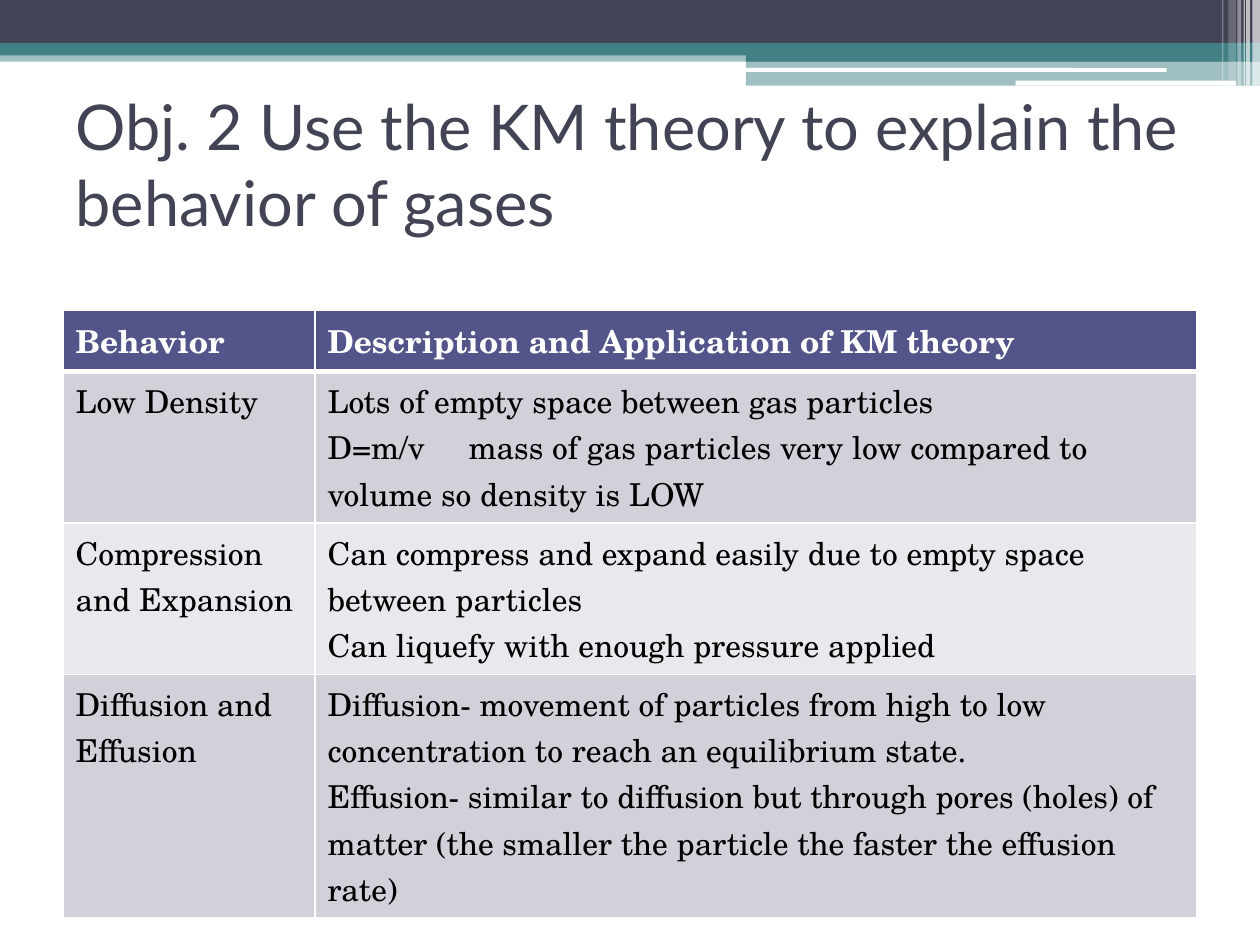
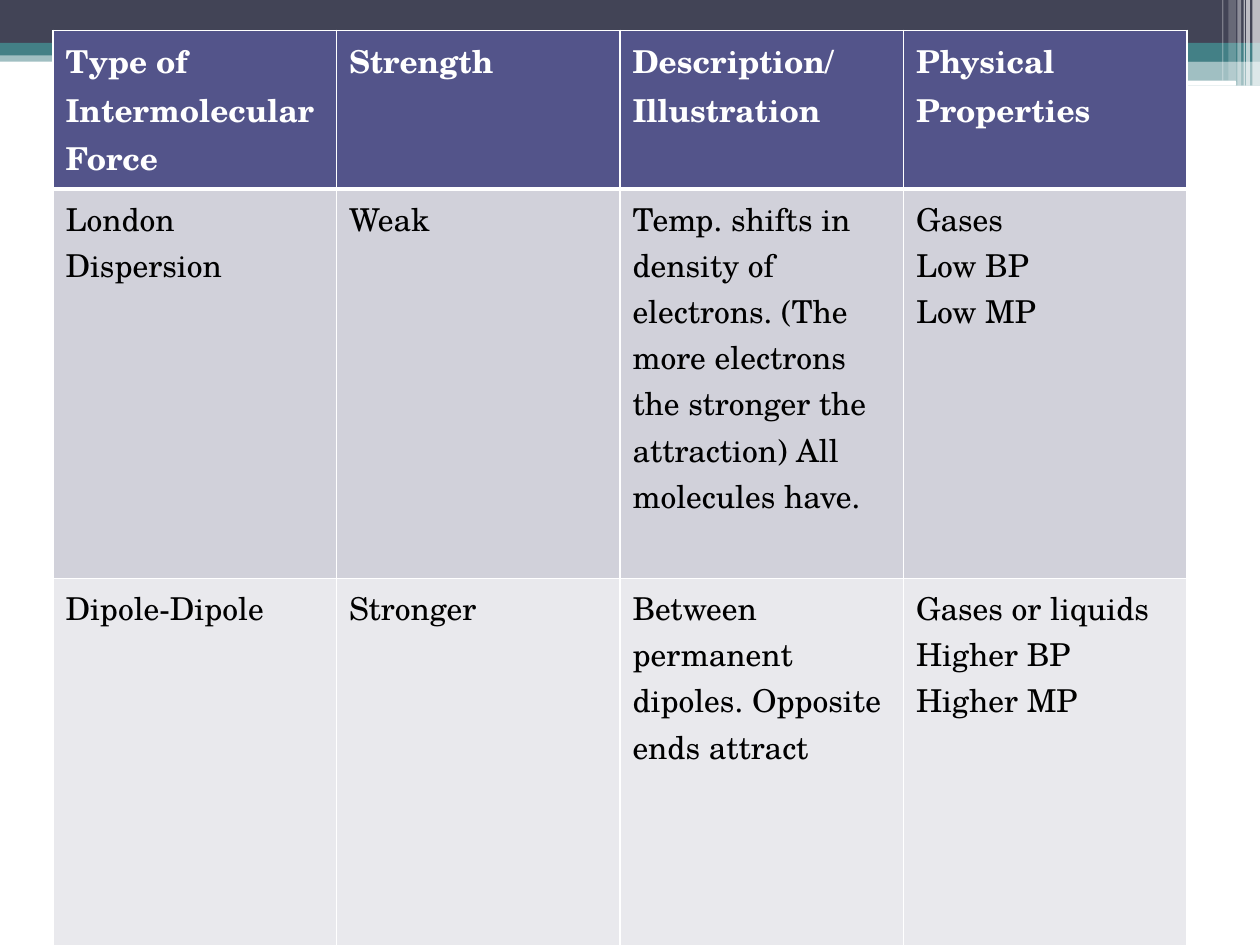
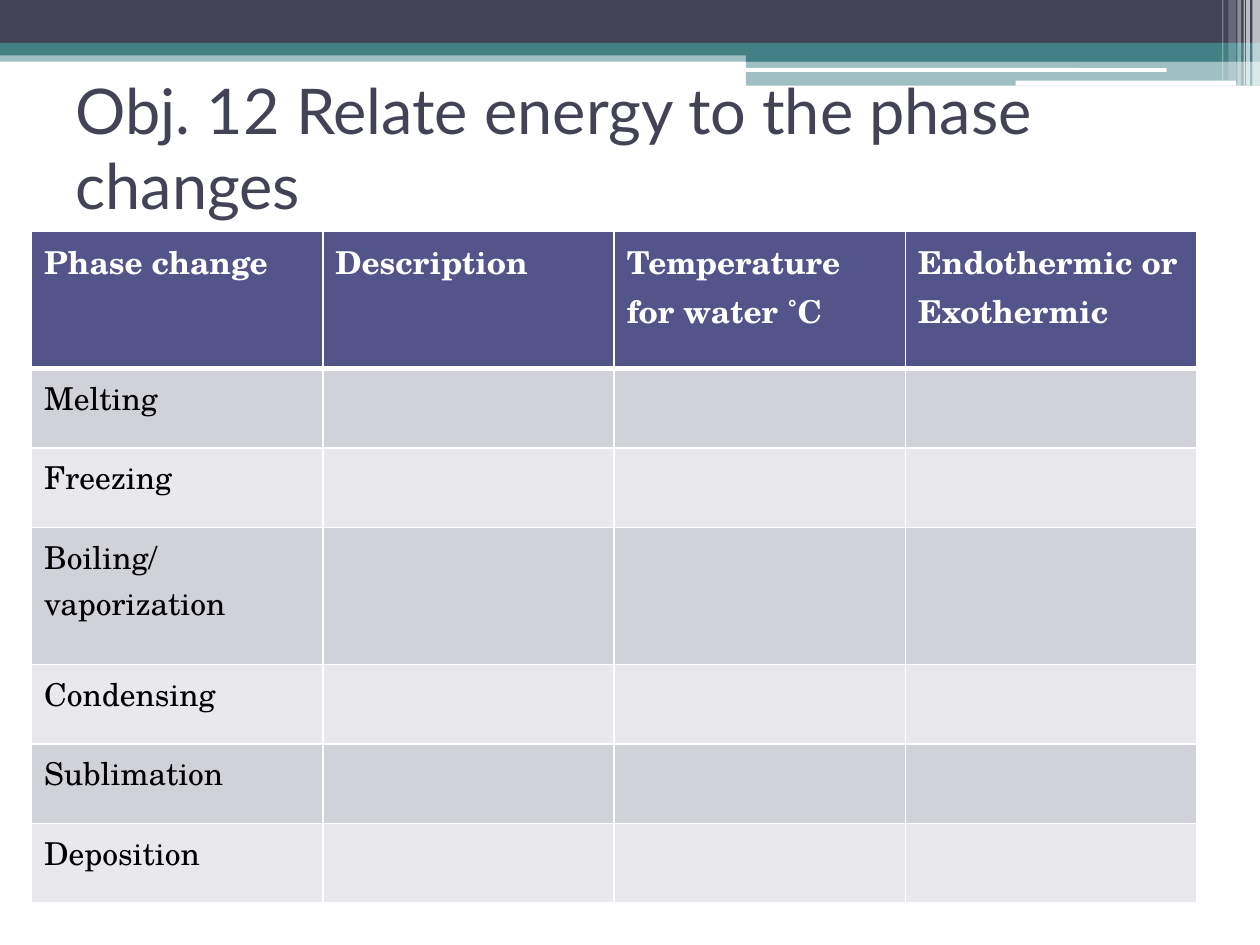
import pptx
import pptx.util
import pptx.dml.color
import pptx.enum.shapes
import pptx.enum.text
import pptx.oxml
import pptx.oxml.ns

qn = pptx.oxml.ns.qn
SPACE = pptx.oxml.ns.nsdecls("a")
INK, TEAL, WHITE, BLACK = "424456", "438086", "FFFFFF", "000000"
HEAD, BANDS = "53548A", ("E9E9ED", "D1D1DA")
SERIF, SANS = "TeX Gyre Schola", "Lato"

deck = pptx.Presentation()
deck.slide_width = pptx.util.Inches(10)
deck.slide_height = pptx.util.Inches(7.5)
UNIT = deck.slide_width // 1000


def tint(code):
    return pptx.dml.color.RGBColor.from_string(code)


def write(para, text, face, size, code, bold=False):
    run = para.add_run()
    run.text = text
    run.font.name = face
    run.font.size = pptx.util.Pt(size)
    run.font.bold = bold
    run.font.color.rgb = tint(code)


RECT = pptx.enum.shapes.MSO_SHAPE.RECTANGLE
ROUND = pptx.enum.shapes.MSO_SHAPE.ROUNDED_RECTANGLE
bars = [
    (RECT, 0, 40, 1000, 9, TEAL, 50),
    (RECT, 0, 0, 1000, 34, INK, 100),
    (RECT, 0, 34, 1000, 10, TEAL, 100),
    (RECT, 592, 39, 408, 10, TEAL, 100),
    (RECT, 592, 48, 408, 20, TEAL, 50),
    (ROUND, 591, 54, 335, 3, WHITE, 100),
    (ROUND, 806, 64, 175, 4, WHITE, 100),
]
for left, wide, high, alpha in [
    (994, 6, 68, 65), (989, 3, 68, 65), (987, 1, 68, 60),
    (982, 3, 68, 40), (975, 6, 64, 20), (970, 1, 64, 30),
]:
    bars.append((RECT, left, 0, wide, high, WHITE, alpha))

pages = [
    {
        "title": "Obj. 2 Use the KM theory to explain the behavior of gases",
        "box": (50, 67, 900, 125),
        "at": (50, 246),
        "cols": [200, 700],
        "rows": [49, 120, 120, 156],
        "cells": [
            ["Behavior", "Description and Application of KM theory"],
            ["Low Density",
             "Lots of empty space between gas particles\n"
             "D=m/v\tmass of gas particles very low compared to volume so density is LOW"],
            ["Compression and Expansion",
             "Can compress and expand easily due to empty space between particles\n"
             "Can liquefy with enough pressure applied"],
            ["Diffusion and Effusion",
             "Diffusion- movement of particles from high to low concentration "
             "to reach an equilibrium state.\n"
             "Effusion- similar to diffusion but through pores (holes) of matter "
             "(the smaller the particle the faster the effusion rate)"],
        ],
    },
    {
        "title": None,
        "at": (42, 24),
        "cols": [225] * 4,
        "rows": [118, 309, 308],
        "cells": [
            ["Type of Intermolecular Force", "Strength",
             "Description/Illustration", "Physical Properties"],
            ["London Dispersion", "Weak",
             "Temp. shifts in density of electrons. (The more electrons "
             "the stronger the attraction) All molecules have.",
             "Gases\nLow BP\nLow MP"],
            ["Dipole-Dipole", "Stronger",
             "Between permanent dipoles. Opposite ends attract",
             "Gases or liquids\nHigher BP\nHigher MP"],
        ],
    },
    {
        "title": "Obj. 12 Relate energy to the phase changes",
        "box": (50, 58, 900, 117),
        "at": (25, 183.5),
        "cols": [231.25] * 4,
        "rows": [109, 63, 63, 109, 63, 63, 63],
        "cells": [
            ["Phase change", "Description",
             "Temperature for water ˚C", "Endothermic or Exothermic"],
            ["Melting"], ["Freezing"], ["Boiling/vaporization"],
            ["Condensing"], ["Sublimation"], ["Deposition"],
        ],
    },
]

for page in pages:
    slide = deck.slides.add_slide(deck.slide_layouts[5 if page["title"] else 6])

    if page is pages[0]:
        for spot, (kind, left, top, wide, high, code, alpha) in enumerate(bars, 2):
            bar = slide.shapes.add_shape(
                kind, left * UNIT, top * UNIT, wide * UNIT, high * UNIT)
            bar.shadow.inherit = False
            bar.line.fill.background()
            bar.fill.solid()
            bar.fill.fore_color.rgb = tint(code)
            if alpha < 100:
                bar.element.find(".//" + qn("a:srgbClr")).append(
                    pptx.oxml.parse_xml(f'<a:alpha {SPACE} val="{alpha * 1000}"/>'))
            deck.slide_master.shapes.element.insert(spot, bar.element)

    if page["title"]:
        title = slide.shapes.title
        title.left, title.top, title.width, title.height = [n * UNIT for n in page["box"]]
        frame = title.text_frame
        frame.word_wrap = True
        frame.auto_size = pptx.enum.text.MSO_AUTO_SIZE.NONE
        frame.vertical_anchor = pptx.enum.text.MSO_ANCHOR.MIDDLE
        frame.paragraphs[0].alignment = pptx.enum.text.PP_ALIGN.LEFT
        write(frame.paragraphs[0], page["title"], SANS, 36, INK)

    cols, rows = page["cols"], page["rows"]
    left, top = page["at"]
    table = slide.shapes.add_table(
        len(rows), len(cols), int(left * UNIT), int(top * UNIT),
        int(sum(cols) * UNIT), sum(rows) * UNIT).table
    for col, wide in zip(table.columns, cols):
        col.width = int(wide * UNIT)
    for row, high in zip(table.rows, rows):
        row.height = high * UNIT

    for r, row in enumerate(table.rows):
        for c, cell in enumerate(row.cells):
            props = cell._tc.get_or_add_tcPr()
            for side in "LRTB":
                thick = 3 if (r, side) in ((0, "B"), (1, "T")) else 1
                props.append(pptx.oxml.parse_xml(
                    f'<a:ln{side} {SPACE} w="{thick * 12700}"><a:solidFill>'
                    f'<a:srgbClr val="{WHITE}"/></a:solidFill></a:ln{side}>'))
            cell.fill.solid()
            cell.fill.fore_color.rgb = tint(BANDS[r % 2] if r else HEAD)
            if c >= len(page["cells"][r]):
                continue
            for n, line in enumerate(page["cells"][r][c].split("\n")):
                frame = cell.text_frame
                para = frame.add_paragraph() if n else frame.paragraphs[0]
                if "\t" in line:
                    para._p.get_or_add_pPr().append(pptx.oxml.parse_xml(
                        f'<a:tabLst {SPACE}><a:tab pos="{112 * UNIT}" algn="l"/></a:tabLst>'))
                write(para, line, SERIF, 18, BLACK if r else WHITE, r == 0)

deck.save("out.pptx")
